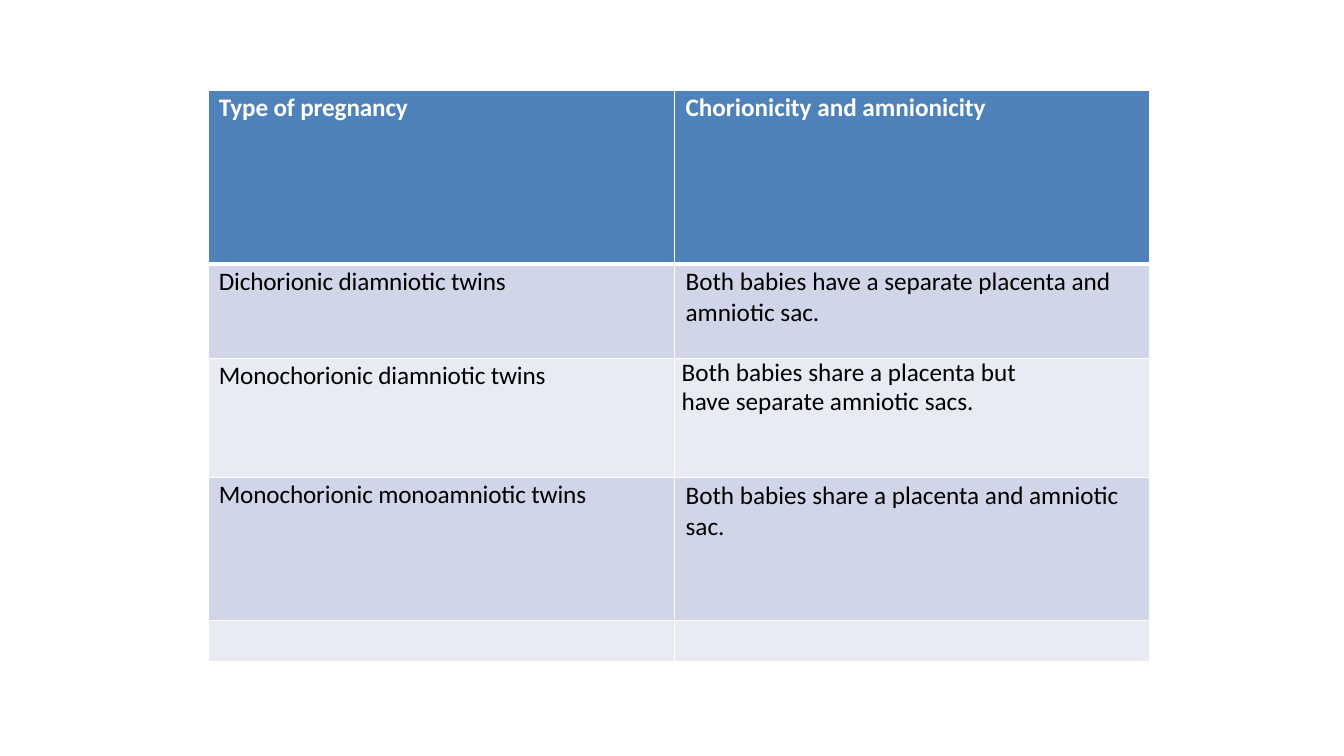
from dataclasses import dataclass

from lxml.etree import SubElement
from pptx import Presentation
from pptx.dml.color import RGBColor
from pptx.oxml.ns import qn
from pptx.util import Inches, Pt

# Content: pregnancy type, chorionicity and amnionicity
ROWS = [
    ("Type of pregnancy", "Chorionicity and amnionicity"),
    ("Dichorionic diamniotic twins",
     "Both babies have a separate placenta and amniotic sac."),
    ("Monochorionic diamniotic twins",
     "Both babies share a placenta but have separate amniotic sacs."),
    ("Monochorionic monoamniotic twins",
     "Both babies share a placenta and amniotic sac."),
    ("", ""),
]

# Grid, in inches
LEFT, TOP = 2.07, 0.9
COLUMN_WIDTHS = [4.62, 4.71]
ROW_HEIGHTS = [1.72, 0.94, 1.18, 1.42, 0.4]
INDENTS = [0.1, 0.11]
SPACE_BEFORE = [1.1, 1.3, 1.6, 1.7, 0]
TRACKING = [-10, 0]  # hundredths of a point, by column
NARROW_CELL = (2, 1)  # set tighter, with a wide right margin


@dataclass(frozen=True)
class Theme:
    font: str = "Calibri"
    size: float = 18
    header: str = "4F81BB"
    bands: tuple = ("E9EBF4", "D0D6E8")
    border: str = "FFFFFF"
    header_text: str = "FFFFFF"
    text: str = "000000"
    thin: float = 1
    thick: float = 3


THEME = Theme()


def add_borders(cell, row):
    """White rules, thick between the header and the body."""
    widths = {
        "L": THEME.thin,
        "R": THEME.thin,
        "T": THEME.thick if row == 1 else THEME.thin,
        "B": THEME.thick if row == 0 else THEME.thin,
    }
    properties = cell._tc.get_or_add_tcPr()
    for side, width in widths.items():
        line = SubElement(properties, qn(f"a:ln{side}"), w=str(Pt(width)))
        fill = SubElement(line, qn("a:solidFill"))
        SubElement(fill, qn("a:srgbClr"), val=THEME.border)


def format_text(cell, row, column):
    para = cell.text_frame.paragraphs[0]
    para.font.size = Pt(THEME.size)
    indent = INDENTS[column]
    para.space_before = Pt(SPACE_BEFORE[row])
    if column == 1 and row > 0:
        para.line_spacing = 1.01
    if (row, column) == NARROW_CELL:
        indent = 0.07
        para.space_before = Pt(0.1)
        para.line_spacing = Pt(21)
        cell.margin_top = 0
        cell.margin_right = Inches(1)
    para._p.get_or_add_pPr().set("marL", str(Inches(indent)))
    for span in para.runs:
        span.font.name = THEME.font
        span.font.size = Pt(THEME.size)
        span.font.bold = row == 0
        color = THEME.header_text if row == 0 else THEME.text
        span.font.color.rgb = RGBColor.from_string(color)
        span.font._element.set("spc", str(TRACKING[column]))


def fill_cell(cell, text, row, column):
    cell.text_frame.text = text
    cell.margin_left = cell.margin_right = cell.margin_bottom = 0
    cell.margin_top = Inches(0.02)
    add_borders(cell, row)
    cell.fill.solid()
    color = THEME.header if row == 0 else THEME.bands[row % 2]
    cell.fill.fore_color.rgb = RGBColor.from_string(color)
    format_text(cell, row, column)


def main():
    deck = Presentation()
    deck.slide_width, deck.slide_height = Inches(13.33), Inches(7.5)
    page = deck.slides.add_slide(deck.slide_layouts[6])

    # Table grid
    table = page.shapes.add_table(
        len(ROWS), len(COLUMN_WIDTHS), Inches(LEFT), Inches(TOP),
        Inches(sum(COLUMN_WIDTHS)), Inches(sum(ROW_HEIGHTS))).table
    for column, width in zip(table.columns, COLUMN_WIDTHS):
        column.width = Inches(width)
    for row, height in zip(table.rows, ROW_HEIGHTS):
        row.height = Inches(height)

    # Cells
    for row, texts in enumerate(ROWS):
        for column, text in enumerate(texts):
            fill_cell(table.cell(row, column), text, row, column)

    deck.save("out.pptx")


if __name__ == "__main__":
    main()
